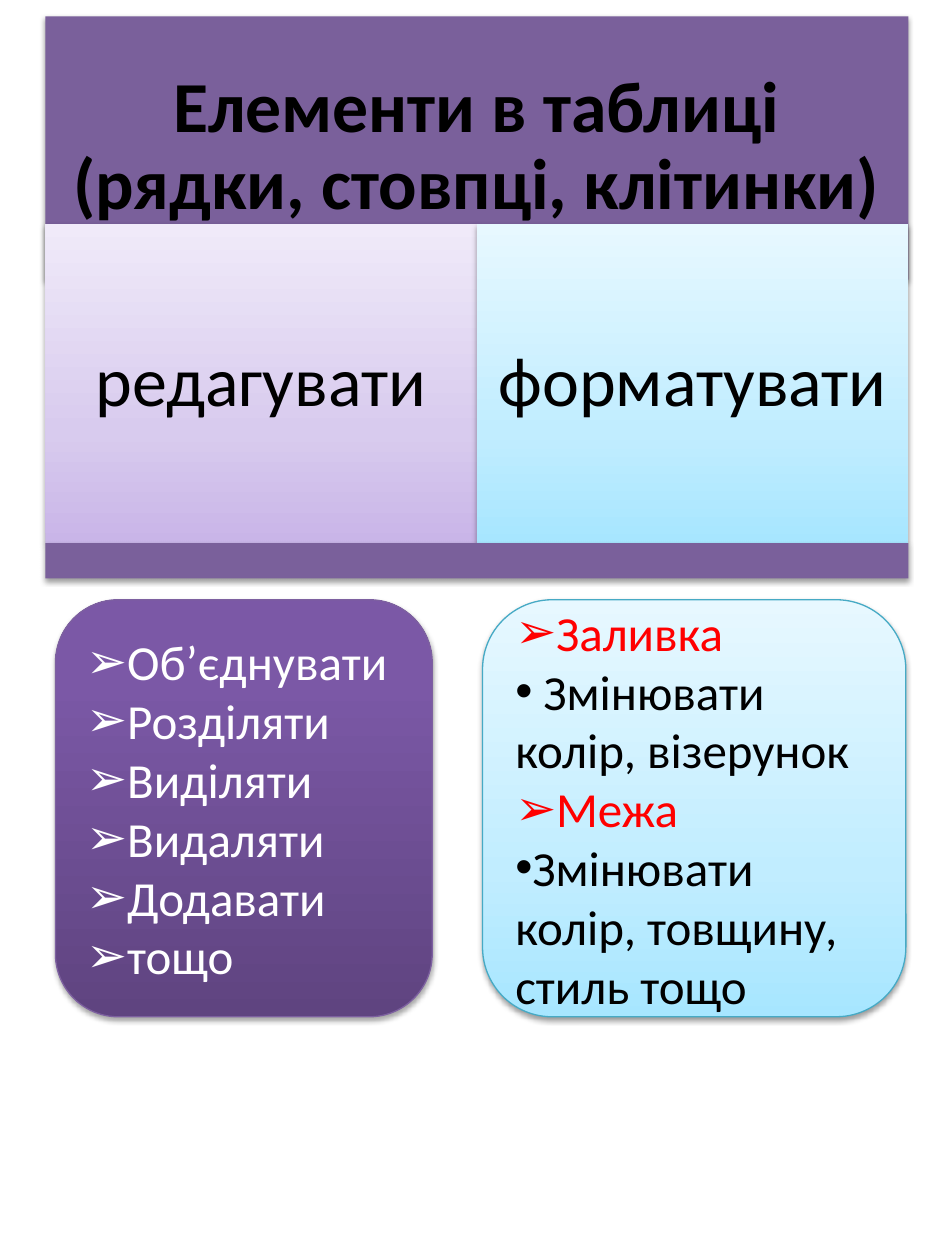
from dataclasses import dataclass

from lxml.etree import SubElement
from pptx import Presentation
from pptx.dml.color import RGBColor
from pptx.enum.shapes import MSO_SHAPE
from pptx.enum.text import MSO_ANCHOR, MSO_AUTO_SIZE, PP_ALIGN
from pptx.oxml.ns import qn
from pptx.util import Inches, Pt


@dataclass(frozen=True)
class Theme:
    font: str = "Calibri"
    bullet_font: str = "Arial"
    title_size: int = 41
    column_size: int = 40
    list_size: int = 28
    black: str = "000000"
    white: str = "FFFFFF"
    red: str = "FF0000"
    purple: str = "7A609B"
    purple_line: str = "7D60A0"
    blue_line: str = "46AAC5"
    # Gradient stops run from the bottom edge up: (percent, colour)
    lilac: tuple = ((0, "C9B5E8"), (35, "D8CBEE"), (100, "F0EAF9"))
    sky: tuple = ((0, "A7E6FF"), (35, "C1EDFF"), (100, "E7F8FF"))
    violet: tuple = ((0, "5F4480"), (80, "7B58A6"), (100, "7C57A8"))


@dataclass(frozen=True)
class Item:
    text: str
    bullet: str
    color: str


@dataclass(frozen=True)
class Column:
    heading: str
    heading_fill: tuple
    card_left: float
    card_width: float
    card_fill: tuple
    card_line: str
    shadow_alpha: int
    shadow_distance: float
    items: tuple


THEME = Theme()
LEFT, WIDTH = 0.36, 6.85
TITLE_TOP, TITLE_HEIGHT = 0.13, 2.09
HEADING_TOP, HEADING_HEIGHT = 1.78, 2.53
BAR_HEIGHT = 0.28
CARD_TOP, CARD_HEIGHT = 4.76, 3.31
PADDING = 0.17
ARROW, DOT = "➢", "•"

COLUMNS = (
    Column("редагувати", THEME.lilac, 0.44, 2.99, THEME.violet,
           THEME.purple_line, 35, 1.8,
           tuple(Item(text, ARROW, THEME.white) for text in (
               "Об’єднувати", "Розділяти", "Виділяти",
               "Видаляти", "Додавати", "тощо"))),
    Column("форматувати", THEME.sky, 3.83, 3.36, THEME.sky,
           THEME.blue_line, 38, 1.6,
           (Item("Заливка", ARROW, THEME.red),
            Item(" Змінювати колір, візерунок", DOT, THEME.black),
            Item("Межа", ARROW, THEME.red),
            Item("Змінювати колір, товщину, стиль тощо", DOT, THEME.black))),
)


def paint(shape, fill: str | tuple, line: str | None = None,
          shadow_alpha: int = 38, shadow_distance: float = 1.6) -> None:
    """Set a solid or gradient fill, an outline and a downward shadow."""
    properties = shape.element.spPr
    if isinstance(fill, str):
        shape.fill.solid()
        shape.fill.fore_color.rgb = RGBColor.from_string(fill)
    else:
        shape.fill.gradient()
        shape.fill.gradient_angle = 90
        stops = properties.find(qn("a:gradFill")).find(qn("a:gsLst"))
        for stop in list(stops):
            stops.remove(stop)
        for percent, color in fill:
            stop = SubElement(stops, qn("a:gs"), pos=str(percent * 1000))
            SubElement(stop, qn("a:srgbClr"), val=color)
    if line:
        shape.line.color.rgb = RGBColor.from_string(line)
        shape.line.width = Pt(0.75)
    else:
        shape.line.fill.background()
    shape.shadow.inherit = False
    shadow = SubElement(
        properties.find(qn("a:effectLst")), qn("a:outerShdw"),
        blurRad=str(Pt(3.1)), dist=str(Pt(shadow_distance)),
        dir="5400000", rotWithShape="0")
    color = SubElement(shadow, qn("a:srgbClr"), val=THEME.black)
    SubElement(color, qn("a:alpha"), val=str(shadow_alpha * 1000))


def add_box(slide, kind, left: float, top: float, width: float, height: float):
    return slide.shapes.add_shape(
        kind, Inches(left), Inches(top), Inches(width), Inches(height))


def prepare_frame(shape, padding: float | None = None):
    """Wrap and centre vertically, with equal insets if given."""
    frame = shape.text_frame
    frame.word_wrap = True
    frame.auto_size = MSO_AUTO_SIZE.NONE
    frame.vertical_anchor = MSO_ANCHOR.MIDDLE
    if padding is not None:
        frame.margin_left = frame.margin_right = Inches(padding)
        frame.margin_top = frame.margin_bottom = Inches(padding)
    return frame


def write(paragraph, text: str, *, size: int, color: str = THEME.black,
          bold: bool = False, align=PP_ALIGN.CENTER,
          spacing: float = 0.9, bullet: str | None = None) -> None:
    paragraph.alignment = align
    paragraph.line_spacing = spacing
    if bullet:
        properties = paragraph._p.get_or_add_pPr()
        SubElement(properties, qn("a:buFont"), typeface=THEME.bullet_font)
        SubElement(properties, qn("a:buChar"), char=bullet)
    run = paragraph.add_run()
    run.text = text
    run.font.name = THEME.font
    run.font.size = Pt(size)
    run.font.bold = bold
    run.font.color.rgb = RGBColor.from_string(color)


def add_title(slide, text: str) -> None:
    title = slide.shapes.title
    title.left, title.top = Inches(LEFT), Inches(TITLE_TOP)
    title.width, title.height = Inches(WIDTH), Inches(TITLE_HEIGHT)
    paint(title, THEME.purple)
    frame = prepare_frame(title, PADDING)
    write(frame.paragraphs[0], text, size=THEME.title_size, bold=True)


def add_heading(slide, column: Column, index: int) -> None:
    width = WIDTH / len(COLUMNS)
    box = add_box(slide, MSO_SHAPE.RECTANGLE, LEFT + index * width,
                  HEADING_TOP, width, HEADING_HEIGHT)
    paint(box, column.heading_fill)
    frame = prepare_frame(box, PADDING)
    write(frame.paragraphs[0], column.heading, size=THEME.column_size)


def add_card(slide, column: Column) -> None:
    card = add_box(slide, MSO_SHAPE.ROUNDED_RECTANGLE, column.card_left,
                   CARD_TOP, column.card_width, CARD_HEIGHT)
    paint(card, column.card_fill, column.card_line,
          column.shadow_alpha, column.shadow_distance)
    frame = prepare_frame(card)
    for index, item in enumerate(column.items):
        paragraph = frame.add_paragraph() if index else frame.paragraphs[0]
        write(paragraph, item.text, size=THEME.list_size, color=item.color,
              align=PP_ALIGN.LEFT, spacing=1.0, bullet=item.bullet)


def main() -> None:
    presentation = Presentation()
    presentation.slide_width = Inches(7.5)
    presentation.slide_height = Inches(10)
    slide = presentation.slides.add_slide(presentation.slide_layouts[5])

    # Title band, two headings and the closing bar
    add_title(slide, "Елементи в таблиці (рядки, стовпці, клітинки)")
    for index, column in enumerate(COLUMNS):
        add_heading(slide, column, index)
    bar = add_box(slide, MSO_SHAPE.RECTANGLE, LEFT,
                  HEADING_TOP + HEADING_HEIGHT, WIDTH, BAR_HEIGHT)
    paint(bar, THEME.purple)

    # Lists under the headings
    for column in COLUMNS:
        add_card(slide, column)

    presentation.save("out.pptx")


if __name__ == "__main__":
    main()
